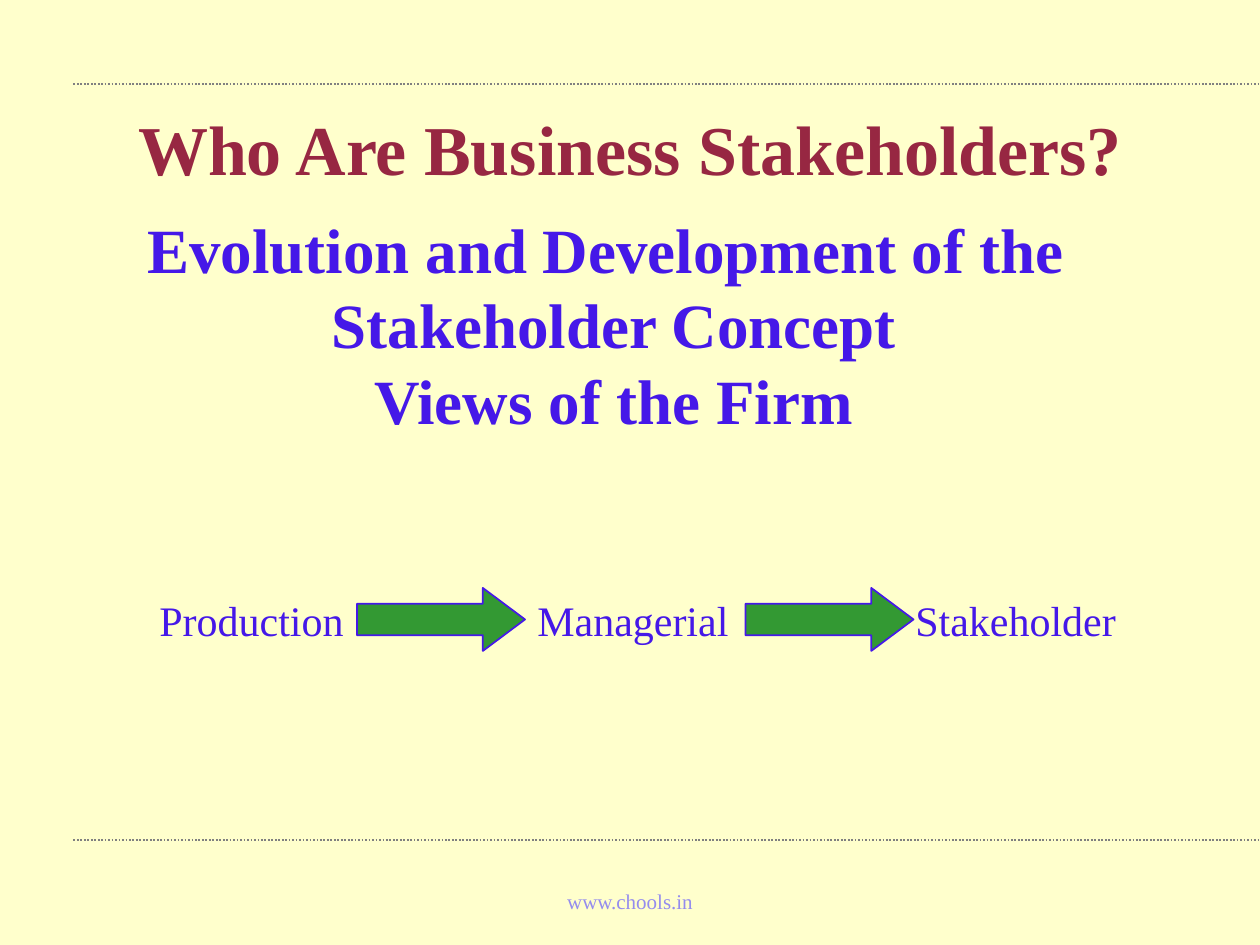
from pptx import Presentation
from pptx.dml.color import RGBColor
from pptx.enum.dml import MSO_LINE
from pptx.enum.shapes import MSO_CONNECTOR, MSO_SHAPE
from pptx.enum.text import MSO_ANCHOR, MSO_AUTO_SIZE, PP_ALIGN
from pptx.oxml.ns import qn
from pptx.util import Pt

LEFT, CENTER = PP_ALIGN.LEFT, PP_ALIGN.CENTER
TOP, MIDDLE = MSO_ANCHOR.TOP, MSO_ANCHOR.MIDDLE
FIXED, GROW = MSO_AUTO_SIZE.NONE, MSO_AUTO_SIZE.SHAPE_TO_FIT_TEXT
FONT = "Times New Roman"

# Content
TITLE = "Who Are Business Stakeholders?"
SUBTITLE = ["Evolution and Development of the ", "Stakeholder Concept", "Views of the Firm"]
VIEWS = ["Production", "Managerial", "Stakeholder"]
FOOTER = "www.chools.in"

# Colours and places, in points
CREAM, GREY, MAROON = "FFFFCC", "808080", "972742"
VIOLET, LILAC, GREEN = "4518E8", "948CEE", "339933"
WIDTH, HEIGHT = 720, 540
RULE_LEFT, RULE_TOPS = 42, (480, 48)
VIEWS_TOP, VIEW_STEP, TAB_STEP = 336, 216, 72
ARROW_LEFTS, ARROW_SIZE = (204, 426), (96, 36)


def rgb(value):
    return RGBColor.from_string(value)


def place(shape, left, top, width, height):
    shape.left, shape.top = Pt(left), Pt(top)
    shape.width, shape.height = Pt(width), Pt(height)


def add_tabs(paragraph, positions):
    properties = paragraph._p.get_or_add_pPr()
    tabs = properties.makeelement(qn("a:tabLst"), {})
    for position in positions:
        tabs.append(tabs.makeelement(qn("a:tab"), {"pos": str(Pt(position)), "algn": "l"}))
    properties.append(tabs)


def write(shape, lines, size, color, bold=False, align=CENTER, anchor=TOP,
          wrap=True, fit=FIXED, tabs=()):
    frame = shape.text_frame
    frame.word_wrap, frame.auto_size, frame.vertical_anchor = wrap, fit, anchor
    frame.text = "\n".join(lines)
    for paragraph in frame.paragraphs:
        paragraph.alignment = align
        if tabs:
            add_tabs(paragraph, tabs)
        for run in paragraph.runs:
            run.font.name, run.font.size, run.font.bold = FONT, Pt(size), bold
            run.font.color.rgb = rgb(color)


def add_text(slide, box, lines, **style):
    shape = slide.shapes.add_textbox(*map(Pt, box))
    write(shape, lines, **style)


def add_rule(slide, y):
    rule = slide.shapes.add_connector(
        MSO_CONNECTOR.STRAIGHT, Pt(RULE_LEFT), Pt(y), Pt(WIDTH), Pt(y))
    rule.line.color.rgb = rgb(GREY)
    rule.line.width = Pt(1)
    rule.line.dash_style = MSO_LINE.ROUND_DOT
    properties = rule._element.spPr
    properties.append(properties.makeelement(qn("a:effectLst"), {}))


def add_arrow(slide, left):
    arrow = slide.shapes.add_shape(
        MSO_SHAPE.RIGHT_ARROW, Pt(left), Pt(VIEWS_TOP), *map(Pt, ARROW_SIZE))
    arrow.adjustments[0], arrow.adjustments[1] = 0.5, 0.67
    arrow.shadow.inherit = False
    arrow.fill.solid()
    arrow.fill.fore_color.rgb = rgb(GREEN)
    arrow.line.color.rgb = rgb(VIOLET)
    arrow.line.width = Pt(1)


def main():
    presentation = Presentation()
    presentation.slide_width, presentation.slide_height = Pt(WIDTH), Pt(HEIGHT)
    slide = presentation.slides.add_slide(presentation.slide_layouts[5])
    slide.background.fill.solid()
    slide.background.fill.fore_color.rgb = rgb(CREAM)

    # Rules at bottom and top
    for y in RULE_TOPS:
        add_rule(slide, y)

    # Title and subtitle
    place(slide.shapes.title, 54, 60, 612, 48)
    write(slide.shapes.title, [TITLE], size=40, color=MAROON, bold=True, anchor=MIDDLE)
    add_text(slide, (76.5, 116.5, 548.5, 137), SUBTITLE, size=36, color=VIOLET,
             bold=True, wrap=False, fit=GROW)

    # Three views: two tabs lead to each next one, with an arrow between
    view_starts = [VIEW_STEP * index for index in range(1, len(VIEWS))]
    tabs = [stop for start in view_starts for stop in (start - TAB_STEP, start)]
    add_text(slide, (84, VIEWS_TOP, 582, 65), ["\t\t".join(VIEWS)], size=24,
             color=VIOLET, align=LEFT, tabs=tabs)
    for left in ARROW_LEFTS:
        add_arrow(slide, left)

    # Footer
    add_text(slide, (238.5, 500.5, 243, 29), [FOOTER], size=12, color=LILAC, anchor=MIDDLE)

    presentation.save("out.pptx")


if __name__ == "__main__":
    main()
